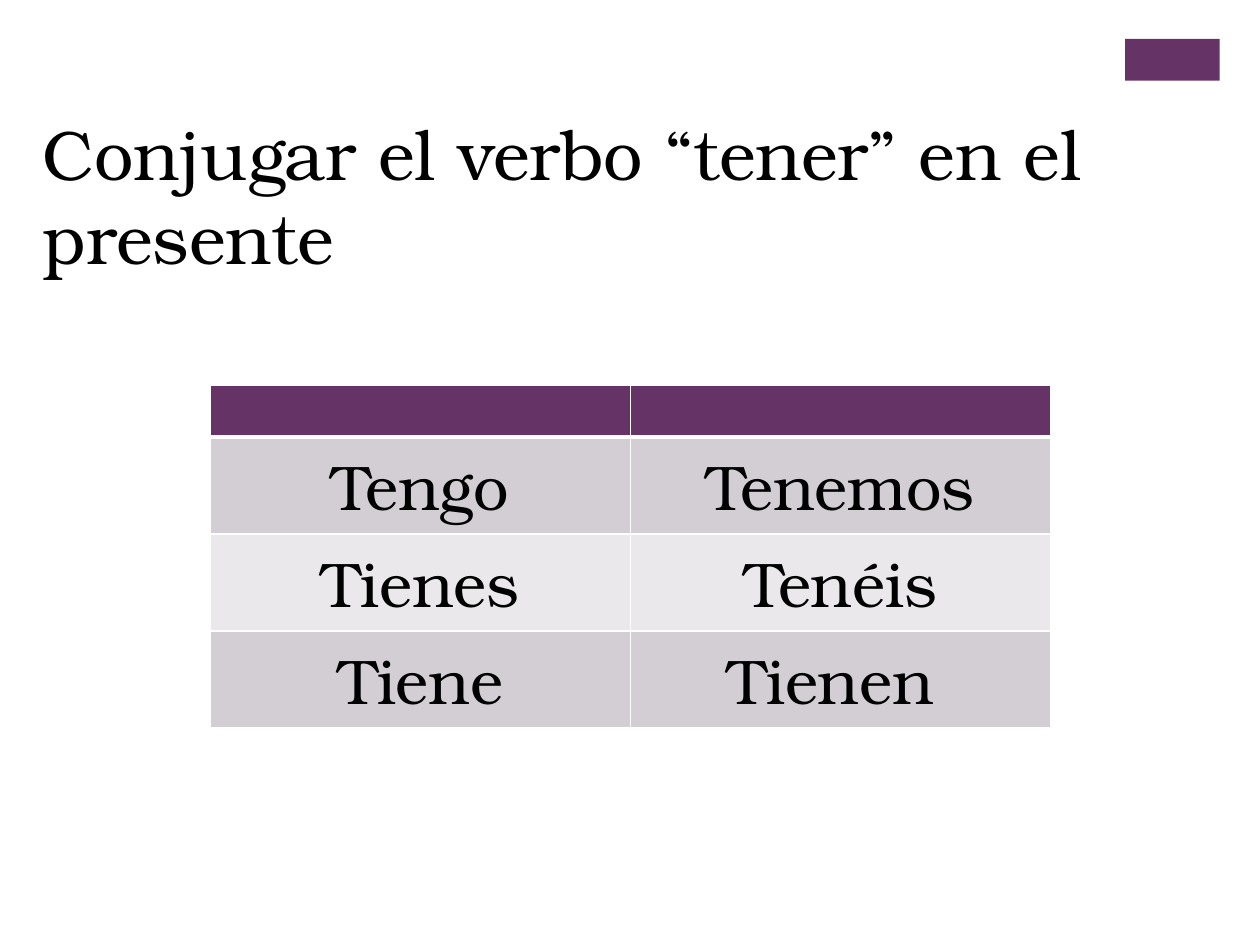
from dataclasses import dataclass

from lxml.etree import SubElement
from pptx import Presentation
from pptx.dml.color import RGBColor
from pptx.enum.shapes import MSO_SHAPE
from pptx.enum.text import MSO_ANCHOR, PP_ALIGN
from pptx.oxml.ns import qn
from pptx.util import Inches, Pt


@dataclass(frozen=True)
class Theme:
    font: str = "TeX Gyre Bonum"
    ink: str = "000000"
    accent: str = "663366"
    bands: tuple = ("D3CED3", "EAE8EA")
    border: str = "FFFFFF"
    title_size: int = 40
    verb_size: int = 36


THEME = Theme()
VERB_FORMS = [
    ("Tengo", "Tenemos"),
    ("Tienes", "Tenéis"),
    ("Tiene", "Tienen "),
]


def paint(target, color):
    target.fill.solid()
    target.fill.fore_color.rgb = RGBColor.from_string(color)


def write(frame, text, *, size, align=PP_ALIGN.LEFT, color=THEME.ink):
    paragraph = frame.paragraphs[0]
    paragraph.alignment = align
    run = paragraph.add_run()
    run.text = text
    run.font.name = THEME.font
    run.font.size = Pt(size)
    run.font.color.rgb = RGBColor.from_string(color)


def add_title(slide, text):
    title = slide.shapes.title
    title.left, title.top = Inches(0.24), Inches(0.83)
    title.width, title.height = Inches(9.43), Inches(1.45)
    title.text_frame.word_wrap = True
    title.text_frame.vertical_anchor = MSO_ANCHOR.TOP
    write(title.text_frame, text, size=THEME.title_size)


def add_accent_block(slide):
    block = slide.shapes.add_shape(
        MSO_SHAPE.RECTANGLE, Inches(8.93), Inches(0.31), Inches(0.75), Inches(0.33)
    )
    block.shadow.inherit = False
    block.line.fill.background()
    paint(block, THEME.accent)


def set_borders(cell, **widths):
    properties = cell._tc.get_or_add_tcPr()
    for position, side in enumerate("LRTB"):
        line = SubElement(properties, qn(f"a:ln{side}"), w=str(Pt(widths.get(side, 1))))
        fill = SubElement(line, qn("a:solidFill"))
        SubElement(fill, qn("a:srgbClr"), val=THEME.border)
        properties.insert(position, line)


def add_verb_table(slide, verb_forms):
    header_height, row_height = Inches(0.41), Inches(0.7)
    table = slide.shapes.add_table(
        len(verb_forms) + 1, 2, Inches(1.67), Inches(3.06), Inches(6.67),
        header_height + row_height * len(verb_forms),
    ).table
    table.rows[0].height = header_height
    for cell in table.rows[0].cells:
        paint(cell, THEME.accent)
        set_borders(cell, B=3)
    for index, forms in enumerate(verb_forms):
        row = table.rows[index + 1]
        row.height = row_height
        for cell, form in zip(row.cells, forms):
            paint(cell, THEME.bands[index % 2])
            set_borders(cell, T=1 if index else 3)
            write(cell.text_frame, form, size=THEME.verb_size, align=PP_ALIGN.CENTER)


def main():
    presentation = Presentation()
    presentation.slide_width, presentation.slide_height = Inches(10), Inches(7.5)
    slide = presentation.slides.add_slide(presentation.slide_layouts[5])
    add_accent_block(slide)
    add_title(slide, "Conjugar el verbo “tener” en el presente")
    add_verb_table(slide, VERB_FORMS)
    presentation.save("out.pptx")


if __name__ == "__main__":
    main()
